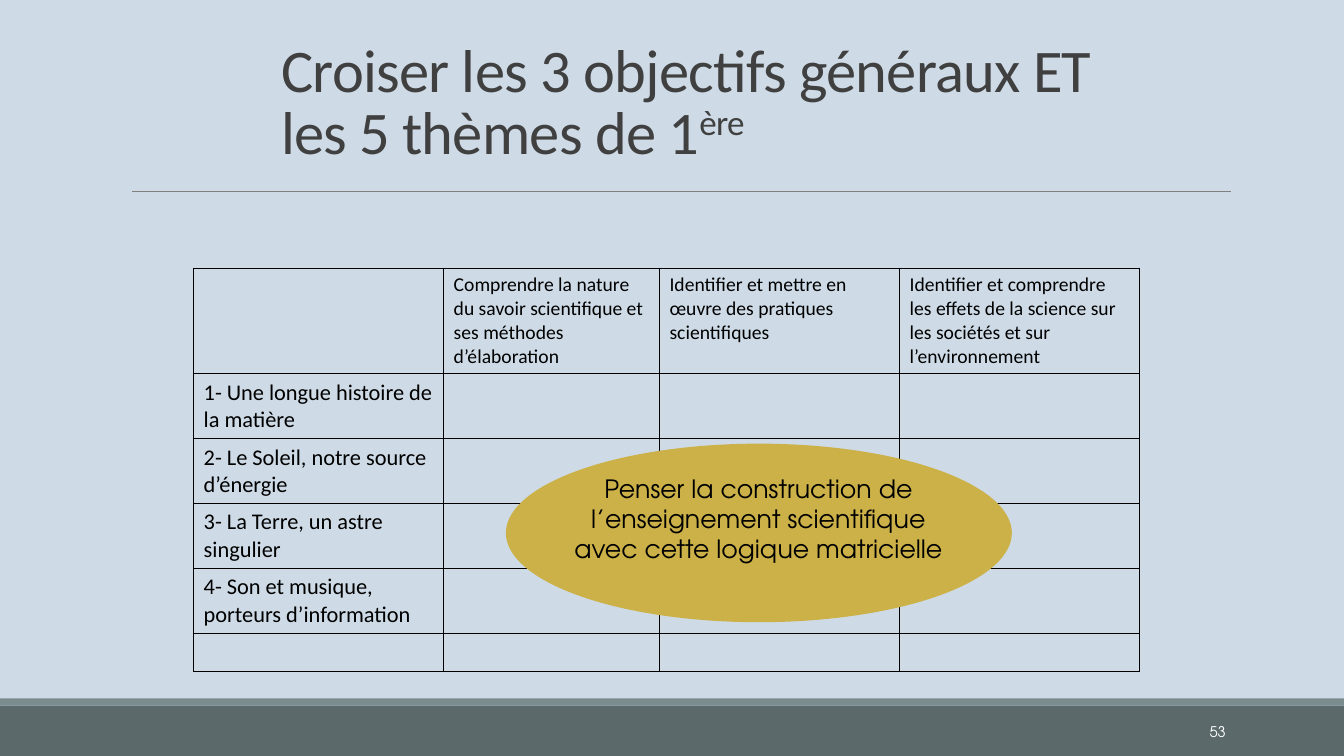
from dataclasses import dataclass

from lxml.etree import SubElement
from pptx import Presentation
from pptx.dml.color import RGBColor as RGB
from pptx.enum.shapes import MSO_CONNECTOR as Connector, MSO_SHAPE as Shape
from pptx.enum.text import MSO_ANCHOR as Anchor, MSO_AUTO_SIZE as AutoSize, PP_ALIGN as Align
from pptx.oxml import parse_xml
from pptx.oxml.ns import nsdecls, qn
from pptx.util import Cm, Pt

TITLE = ("Croiser les 3 objectifs généraux ET les 5 thèmes de 1", "ère")
GOALS = [
    "Comprendre la nature du savoir scientifique et ses méthodes d’élaboration",
    "Identifier et mettre en œuvre des pratiques scientifiques",
    "Identifier et comprendre les effets de la science sur les sociétés et sur l’environnement",
]
THEMES = [
    "1- Une longue histoire de la matière",
    "2- Le Soleil, notre source d’énergie",
    "3- La Terre, un astre singulier",
    "4- Son et musique, porteurs d’information",
    "",
]
MESSAGE = ["Penser la construction de l’enseignement scientifique", "avec cette logique matricielle"]
PAGE = "53"

SLIDE = (33.87, 19.05)
TITLE_BOX = (6.83, 0.74, 21.87, 3.58)
RULE = (3.33, 4.83, 31.01, 4.83)
BANDS = [("footer", (0, 17.78, 33.87, 1.27)), ("strip", (0, 17.6, 33.87, 0.18))]
GRID_AT = (4.88, 6.76)
COLUMNS = [6.3, 5.44, 6.05, 6.05]
ROWS = [2.46] + [1.52] * 4 + [0.97]
PAGE_BOX = (27.51, 17.93, 3.63, 1.02)
OVAL_BOX = (12.75, 11.18, 12.75, 4.5)
MESSAGE_BOX = (12.65, 11.79, 12.93, 2.57)


@dataclass(frozen=True)
class Theme:
    """Colours, fonts and type sizes of the slide."""
    back: str = "CEDBE6"
    footer: str = "5B696B"
    strip: str = "7A8C8E"
    rule: str = "808080"
    title: str = "404040"
    ink: str = "000000"
    light: str = "FFFFFF"
    oval: str = "CBB148"
    body_font: str = "Calibri"
    accent_font: str = "TeX Gyre Adventor"
    title_size: float = 43.2
    goal_size: float = 14
    theme_size: float = 16
    message_size: float = 18
    page_size: float = 10.5


T = Theme()


def cms(values):
    """Turn centimetre numbers into lengths."""
    return [Cm(v) for v in values]


def add_run(p, text, font, size, color):
    """Add a formatted run to a paragraph."""
    r = p.add_run()
    r.text = text
    for name, value in {"name": font, "size": Pt(size)}.items():
        setattr(r.font, name, value)
    r.font.color.rgb = RGB.from_string(color)
    return r


def add_shape(s, kind, box, color):
    """Add a flat filled shape without outline."""
    sp = s.shapes.add_shape(kind, *cms(box))
    sp.shadow.inherit = False
    sp.fill.solid()
    sp.fill.fore_color.rgb = RGB.from_string(color)
    sp.line.fill.background()


def add_text(s, box, lines, size, color, align, anchor):
    """Add a wrapped text box in the accent font."""
    tf = s.shapes.add_textbox(*cms(box)).text_frame
    for name, value in {"word_wrap": True, "vertical_anchor": anchor}.items():
        setattr(tf, name, value)
    for i, line in enumerate(lines):
        p = tf.add_paragraph() if i else tf.paragraphs[0]
        p.alignment = align
        add_run(p, line, T.accent_font, size, color)


def add_title(s):
    """Place and fill the title placeholder."""
    sp = s.shapes.title
    for name, value in zip(("left", "top", "width", "height"), cms(TITLE_BOX)):
        setattr(sp, name, value)
    tf = sp.text_frame
    for name, value in {"word_wrap": True, "auto_size": AutoSize.NONE,
                        "vertical_anchor": Anchor.BOTTOM}.items():
        setattr(tf, name, value)
    p = tf.paragraphs[0]
    for name, value in {"alignment": Align.LEFT, "line_spacing": 0.85}.items():
        setattr(p, name, value)
    for text, baseline in zip(TITLE, ("0", "30000")):
        r = add_run(p, text, T.body_font, T.title_size, T.title)
        r.font._element.set("spc", "-50")
        r.font._element.set("baseline", baseline)


def add_rule(s):
    """Draw the thin line under the title."""
    line = s.shapes.add_connector(Connector.STRAIGHT, *cms(RULE))
    line.line.color.rgb = RGB.from_string(T.rule)
    line.line.width = Pt(0.5)
    SubElement(line._element.spPr, qn("a:effectLst"))


def style_cell(cell):
    """Leave the cell unfilled and frame it on four sides."""
    cell.fill.background()
    tcPr = cell._tc.get_or_add_tcPr()
    for i, side in enumerate("LRTB"):
        tcPr.insert(i, parse_xml(
            f'<a:ln{side} {nsdecls("a")} w="{Pt(1)}"><a:solidFill>'
            f'<a:srgbClr val="{T.ink}"/></a:solidFill></a:ln{side}>'))


def add_matrix(s):
    """Cross the themes with the goals in a table."""
    size = (sum(COLUMNS), sum(ROWS))
    table = s.shapes.add_table(len(ROWS), len(COLUMNS), *cms(GRID_AT + size)).table
    for name in ("first_row", "horz_banding"):
        setattr(table, name, False)
    for column, width in zip(table.columns, COLUMNS):
        column.width = Cm(width)
    for row, height in zip(table.rows, ROWS):
        row.height = Cm(height)
    content = [[""] + GOALS] + [[theme] + [""] * len(GOALS) for theme in THEMES]
    for i, texts in enumerate(content):
        for j, text in enumerate(texts):
            cell = table.cell(i, j)
            style_cell(cell)
            p = cell.text_frame.paragraphs[0]
            if text:
                add_run(p, text, T.body_font, T.theme_size if i else T.goal_size, T.ink)
            else:
                p.font.size = Pt(T.theme_size)


def main():
    """Build and save the slide."""
    prs = Presentation()
    prs.slide_width, prs.slide_height = cms(SLIDE)
    s = prs.slides.add_slide(prs.slide_layouts[5])
    s.background.fill.solid()
    s.background.fill.fore_color.rgb = RGB.from_string(T.back)
    for name, box in BANDS:
        add_shape(s, Shape.RECTANGLE, box, getattr(T, name))
    add_rule(s)
    add_title(s)
    add_matrix(s)
    add_text(s, PAGE_BOX, [PAGE], T.page_size, T.light, Align.RIGHT, Anchor.MIDDLE)
    add_shape(s, Shape.OVAL, OVAL_BOX, T.oval)
    add_text(s, MESSAGE_BOX, MESSAGE, T.message_size, T.ink, Align.CENTER, Anchor.TOP)
    prs.save("out.pptx")


if __name__ == "__main__":
    main()
